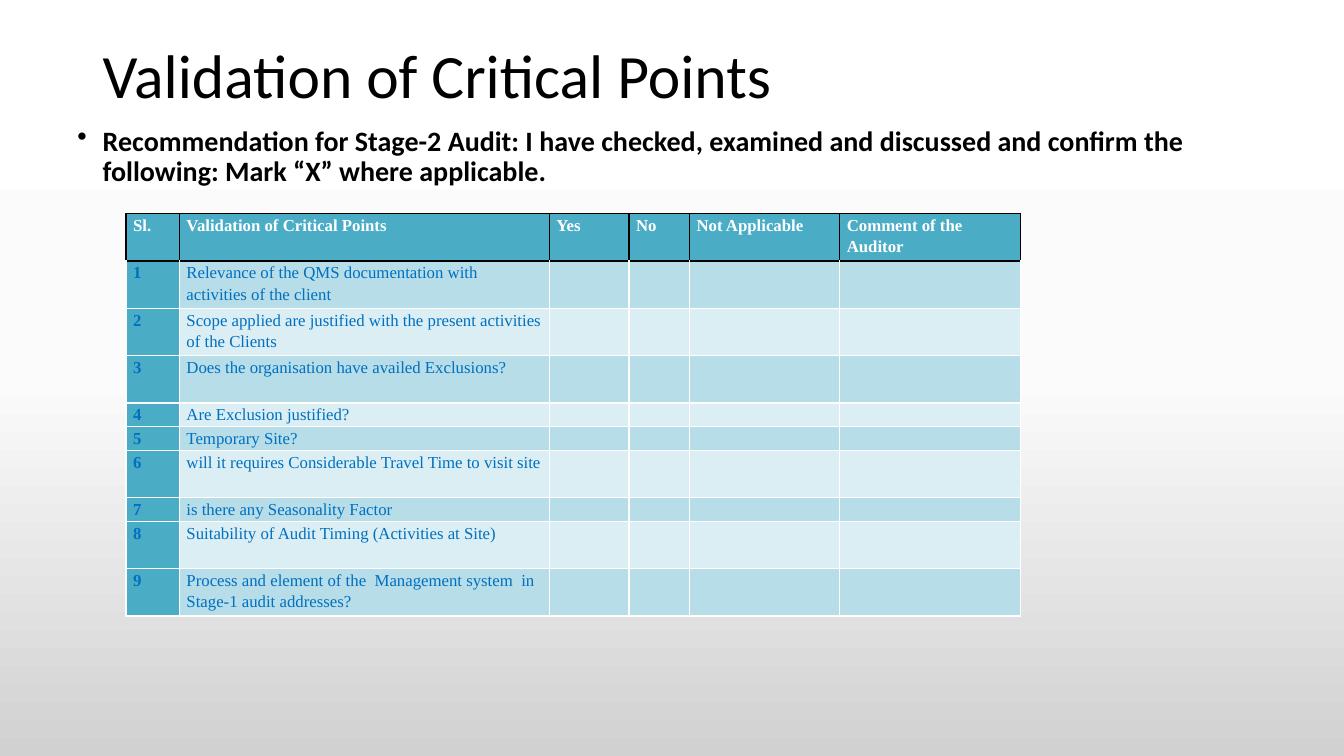
"""Builds the audit slide listing the critical points to validate."""
from lxml import etree
from pptx import Presentation
from pptx import util as u
from pptx.dml.color import RGBColor
from pptx.enum import text
from pptx.oxml.ns import qn

TITLE = "Validation of Critical Points"
INTRO = ("Recommendation for Stage-2 Audit: I have checked, examined and discussed "
         "and confirm the following: Mark “X” where applicable.")
COLUMNS = [("Sl.", 0.53), ("Validation of Critical Points", 3.67), ("Yes", 0.79),
           ("No", 0.6), ("Not Applicable", 1.49), ("Comment of the Auditor", 1.79)]
TALL, SHORT = 0.47, 0.235
POINTS = [
    ("Relevance of the QMS documentation with activities of the client", TALL),
    ("Scope applied are justified with the present activities of the Clients", TALL),
    ("Does the organisation have availed Exclusions?", TALL),
    ("Are Exclusion justified?", SHORT),
    ("Temporary Site?", SHORT),
    ("will it requires Considerable Travel Time to visit site", TALL),
    ("is there any Seasonality Factor", SHORT),
    ("Suitability of Audit Timing (Activities at Site)", TALL),
    ("Process and element of the  Management system  in Stage-1 audit addresses?", TALL),
]
THEME = {
    "heading_font": "Calibri", "table_font": "Times New Roman",
    "title_size": 44, "intro_size": 20, "table_size": 12,
    "ink": "000000", "white": "FFFFFF", "point": "0070C0",
    "strong": "4BACC6", "bands": ("B6DDE8", "DAEEF3"),
    "backdrop": [(0, "FFFFFF"), (50, "FBFBFB"), (100, "D1D1D1")],
}


def style(para, face, size, color, bold=False):
    font = para.font
    font.name, font.size, font.bold = face, u.Pt(size), bold
    font.color.rgb = RGBColor.from_string(color)


def paint_background(page):
    fill = page.background.fill
    fill.gradient()
    fill.gradient_angle = 270
    stops = page.element.find(".//" + qn("a:gsLst"))
    for stop in list(stops):
        stops.remove(stop)
    for percent, color in THEME["backdrop"]:
        stop = etree.SubElement(stops, qn("a:gs"), pos=str(percent * 1000))
        etree.SubElement(stop, qn("a:srgbClr"), val=color)


def add_text(page, words, place, size, bold=False):
    box = page.shapes.add_textbox(*map(u.Inches, place))
    frame = box.text_frame
    frame.word_wrap = True
    frame.vertical_anchor = text.MSO_ANCHOR.TOP
    para = frame.paragraphs[0]
    para.text, para.line_spacing = words, 0.9
    style(para, THEME["heading_font"], size, THEME["ink"], bold)
    return para


def add_bullet(para):
    props = para._p.get_or_add_pPr()
    indent = u.Inches(0.25)
    props.set("marL", str(indent))
    props.set("indent", str(-indent))
    bullet = etree.Element(qn("a:buChar"), char="•")
    props.find(qn("a:defRPr")).addprevious(bullet)


def add_borders(cell, colors):
    props = cell._tc.get_or_add_tcPr()
    for position, (side, color) in enumerate(zip(("lnL", "lnR", "lnT", "lnB"), colors)):
        line = etree.Element(qn("a:" + side), w=str(u.Pt(1)))
        fill = etree.SubElement(line, qn("a:solidFill"))
        etree.SubElement(fill, qn("a:srgbClr"), val=color)
        props.insert(position, line)


def fill_cell(cell, words, row, column):
    header = row == 0
    strong = header or column == 0
    background = THEME["strong"] if strong else THEME["bands"][(row - 1) % 2]
    cell.fill.solid()
    cell.fill.fore_color.rgb = RGBColor.from_string(background)
    cell.margin_left = cell.margin_right = u.Inches(0.07)
    cell.margin_top = cell.margin_bottom = 0
    para = cell.text_frame.paragraphs[0]
    para.line_spacing = 1.15
    style(para, THEME["table_font"], THEME["table_size"],
          THEME["white" if header else "point"], strong)
    if words:
        para.text = words
    else:
        etree.SubElement(para._p, qn("a:endParaRPr"), sz=str(THEME["table_size"] * 100))
    ink, white = THEME["ink"], THEME["white"]
    add_borders(cell, [ink] * 4 if header else
                [white, white, ink if row == 1 else white, white])


def add_checklist(page):
    rows = [[name for name, _ in COLUMNS]]
    rows += [[str(number), point] + [""] * (len(COLUMNS) - 2)
             for number, (point, _) in enumerate(POINTS, 1)]
    widths = [width for _, width in COLUMNS]
    heights = [TALL] + [height for _, height in POINTS]
    place = (1.25, 2.12, sum(widths), sum(heights))
    table = page.shapes.add_table(len(rows), len(widths), *map(u.Inches, place)).table
    table.first_row = table.horz_banding = False
    for column, width in zip(table.columns, widths):
        column.width = u.Inches(width)
    for row, height in zip(table.rows, heights):
        row.height = u.Inches(height)
    for row, entries in enumerate(rows):
        for column, words in enumerate(entries):
            fill_cell(table.cell(row, column), words, row, column)


def main():
    deck = Presentation()
    deck.slide_width, deck.slide_height = u.Inches(13.33), u.Inches(7.5)
    page = deck.slides.add_slide(deck.slide_layouts[6])
    paint_background(page)
    add_text(page, TITLE, (0.92, 0.4, 11.5, 1.45), THEME["title_size"])
    intro = add_text(page, INTRO, (0.67, 1.21, 11.5, 4.76), THEME["intro_size"], bold=True)
    intro.space_before = u.Pt(10)
    add_bullet(intro)
    add_checklist(page)
    deck.save("out.pptx")


if __name__ == "__main__":
    main()
